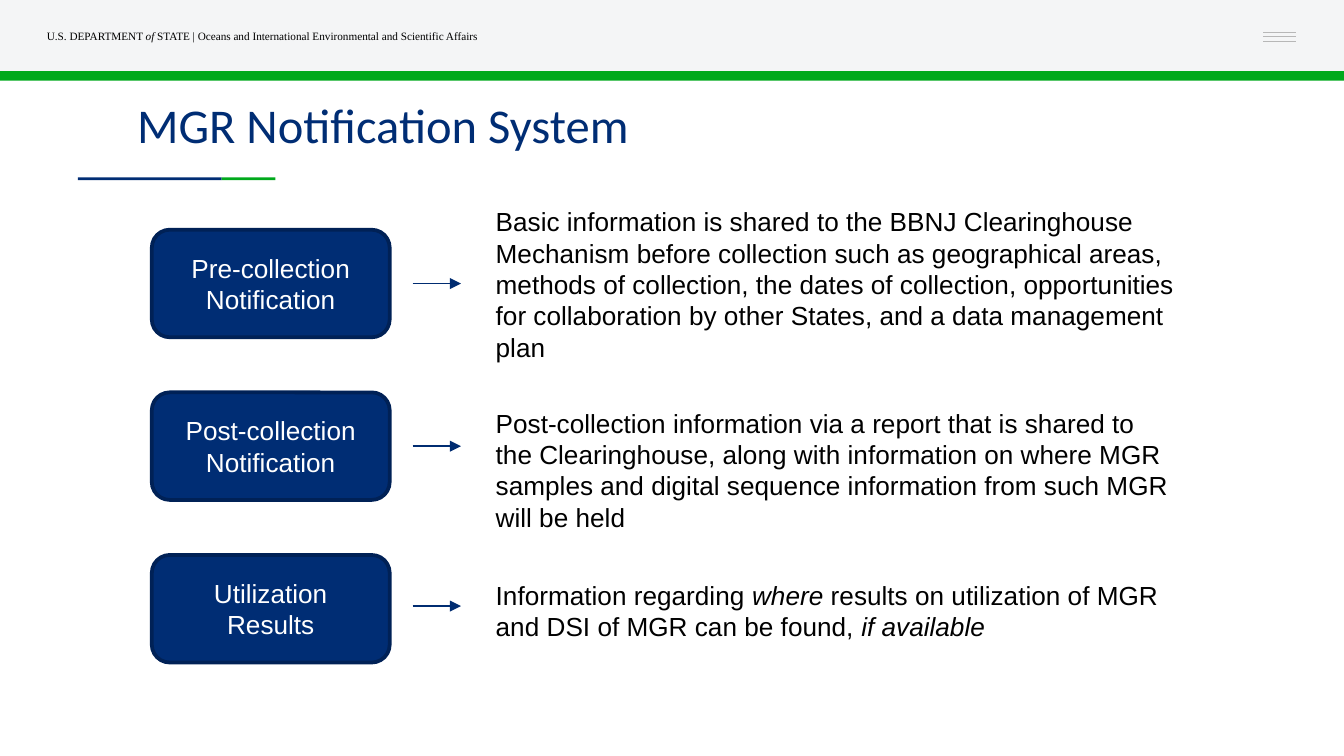
from dataclasses import dataclass

from lxml import etree
from pptx import Presentation
from pptx.dml.color import RGBColor
from pptx.enum.shapes import MSO_CONNECTOR, MSO_SHAPE
from pptx.enum.text import MSO_ANCHOR, MSO_AUTO_SIZE, PP_ALIGN
from pptx.oxml.ns import qn
from pptx.util import Inches, Pt

RECTANGLE = MSO_SHAPE.RECTANGLE
ROUNDED = MSO_SHAPE.ROUNDED_RECTANGLE
STRAIGHT = MSO_CONNECTOR.STRAIGHT
TOP, MIDDLE = MSO_ANCHOR.TOP, MSO_ANCHOR.MIDDLE
LEFT, CENTER = PP_ALIGN.LEFT, PP_ALIGN.CENTER
NO_FIT, GROW = MSO_AUTO_SIZE.NONE, MSO_AUTO_SIZE.SHAPE_TO_FIT_TEXT


@dataclass(frozen=True)
class Theme:
    """Colours, fonts and type sizes of the slide."""
    navy: str = "002D74"
    navy_edge: str = "002156"
    arrow: str = "002C71"
    green: str = "00A91C"
    band: str = "F4F5F6"
    menu: str = "B7B7B7"
    black: str = "000000"
    white: str = "FFFFFF"
    title_font: str = "Calibri"
    body_font: str = "Arial"
    header_font: str = "Times New Roman"
    title_size: float = 26
    body_size: float = 14
    header_size: float = 6


THEME = Theme()
SLIDE_WIDTH = 10
SLIDE_HEIGHT = SLIDE_WIDTH * 9 / 16

AGENCY = [
    ("U.S. DEPARTMENT ", False),
    ("of", True),
    (" STATE | Oceans and International Environmental and Scientific Affairs", False),
]

STAGES = [
    ("Pre-collection Notification", 1.48, 1.51, 2.11, [
        ("Basic information is shared to the BBNJ Clearinghouse Mechanism before "
         "collection such as geographical areas, methods of collection, the dates "
         "of collection, opportunities for collaboration by other States, and a "
         "data management plan", False)]),
    ("Post-collection Notification", 2.98, 1.28, 3.32, [
        ("Post-collection information via a report that is shared to the "
         "Clearinghouse, along with information on where MGR samples and digital "
         "sequence information from such MGR will be held", False)]),
    ("Utilization Results", 4.26, 0.81, 4.51, [
        ("Information regarding ", False),
        ("where", True),
        (" results on utilization of MGR and DSI of MGR can be found, ", False),
        ("if available", True)]),
]
FIRST_STAGE_TOP, STAGE_PITCH = 1.71, 1.21


def style_font(font, name, size, color):
    """Set the typeface, point size and colour of a font."""
    font.name = name
    font.size = Pt(size)
    font.color.rgb = RGBColor.from_string(color)


def add_block(slide, kind, box, fill, edge=None):
    """Add a filled preset shape, outlined only when an edge colour is given."""
    block = slide.shapes.add_shape(kind, *map(Inches, box))
    block.shadow.inherit = False
    block.fill.solid()
    block.fill.fore_color.rgb = RGBColor.from_string(fill)
    if edge:
        block.line.color.rgb = RGBColor.from_string(edge)
        block.line.width = Pt(2)
    else:
        block.line.fill.background()
    return block


def add_line(slide, start_x, end_x, y, color, arrow=False):
    """Add a thin horizontal line, with an arrowhead if wanted."""
    line = slide.shapes.add_connector(
        STRAIGHT, Inches(start_x), Inches(y), Inches(end_x), Inches(y))
    line.line.color.rgb = RGBColor.from_string(color)
    line.line.width = Pt(0.75)
    if arrow:
        outline = line.line._get_or_add_ln()
        etree.SubElement(outline, qn("a:tailEnd"), type="triangle")
    etree.SubElement(line._element.spPr, qn("a:effectLst"))


def add_text(slide, box, pieces, font, size):
    """Add a wrapping text box made of (text, italic) pieces."""
    frame = slide.shapes.add_textbox(*map(Inches, box)).text_frame
    frame.word_wrap = True
    for text, italic in pieces:
        run = frame.paragraphs[0].add_run()
        run.text = text
        run.font.italic = italic
        style_font(run.font, font, size, THEME.black)
    return frame


def add_header(slide):
    """Draw the grey band, green rule, agency line and menu icon."""
    add_block(slide, RECTANGLE, (0, 0, SLIDE_WIDTH, 0.53), THEME.band)
    for y in (0.24, 0.27, 0.31):
        add_line(slide, 9.4, 9.64, y, THEME.menu)
    add_block(slide, RECTANGLE, (0, 0.53, SLIDE_WIDTH, 0.07), THEME.green)
    agency = add_text(slide, (0.25, 0.09, 3.75, 0.35), AGENCY,
                      THEME.header_font, THEME.header_size)
    agency.vertical_anchor = MIDDLE


def add_title(slide, text):
    """Fill the title placeholder and underline it in two colours."""
    title = slide.shapes.title
    title.left, title.top = Inches(0.92), Inches(0.61)
    title.width, title.height = Inches(8.66), Inches(0.59)
    frame = title.text_frame
    frame.text = text
    frame.auto_size = NO_FIT
    frame.vertical_anchor = TOP
    frame.margin_top = frame.margin_bottom = Inches(0.1)
    heading = frame.paragraphs[0]
    heading.alignment = LEFT
    style_font(heading.runs[0].font, THEME.title_font, THEME.title_size, THEME.navy)
    add_block(slide, RECTANGLE, (0.58, 1.32, 1.07, 0.02), THEME.navy)
    add_block(slide, RECTANGLE, (1.65, 1.32, 0.4, 0.02), THEME.green)


def add_stage(slide, top, label, detail_top, detail_height, arrow_y, detail):
    """Add one stage box with its arrow and explanation."""
    stage = add_block(slide, ROUNDED, (1.13, top, 1.77, 0.8),
                      THEME.navy, THEME.navy_edge)
    frame = stage.text_frame
    frame.text = label
    frame.word_wrap = True
    frame.vertical_anchor = MIDDLE
    caption = frame.paragraphs[0]
    caption.alignment = CENTER
    style_font(caption.runs[0].font, THEME.body_font, THEME.body_size, THEME.white)
    add_line(slide, 3.07, 3.43, arrow_y, THEME.arrow, arrow=True)
    explanation = add_text(slide, (3.59, detail_top, 5.26, detail_height), detail,
                           THEME.body_font, THEME.body_size)
    explanation.auto_size = GROW


def main():
    """Build the notification system slide and save it."""
    deck = Presentation()
    deck.slide_width, deck.slide_height = Inches(SLIDE_WIDTH), Inches(SLIDE_HEIGHT)
    slide = deck.slides.add_slide(deck.slide_layouts.get_by_name("Title Only"))
    add_header(slide)
    add_title(slide, "MGR Notification System")
    for index, stage in enumerate(STAGES):
        add_stage(slide, FIRST_STAGE_TOP + index * STAGE_PITCH, *stage)
    deck.save("out.pptx")


if __name__ == "__main__":
    main()
